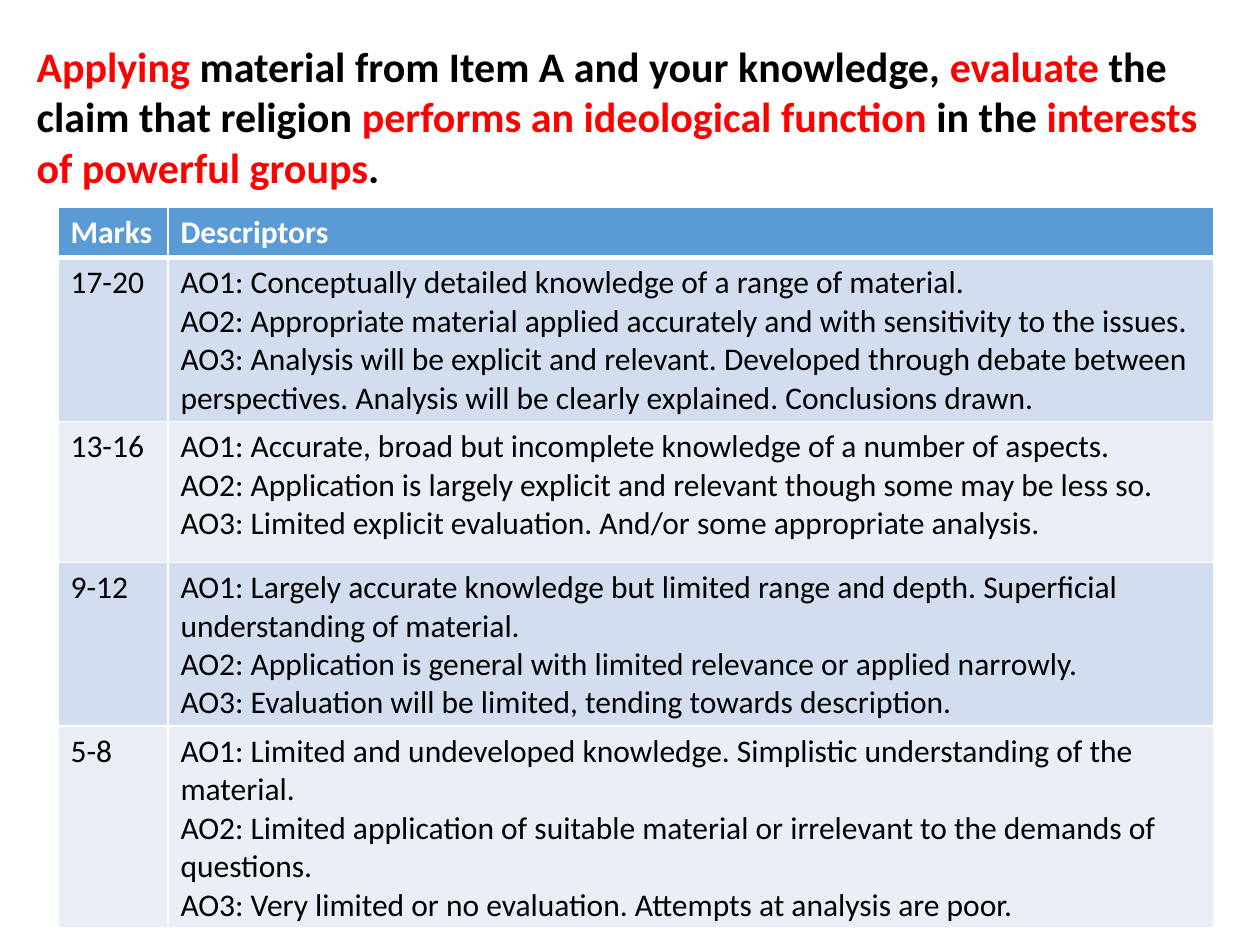
from dataclasses import dataclass

from lxml.etree import SubElement
from pptx import Presentation
from pptx.dml.color import RGBColor
from pptx.enum.text import MSO_ANCHOR, MSO_AUTO_SIZE, PP_ALIGN
from pptx.oxml.ns import qn
from pptx.slide import Slide
from pptx.table import _Cell
from pptx.util import Emu, Pt

EMU_PER_PX = 914400 / 126
FONT = "Calibri"
BLACK = RGBColor(0x00, 0x00, 0x00)
WHITE = RGBColor(0xFF, 0xFF, 0xFF)
RED = RGBColor(0xFF, 0x00, 0x00)
HEADER_BLUE = RGBColor(0x5B, 0x9B, 0xD5)
BANDS = (RGBColor(0xD2, 0xDE, 0xEF), RGBColor(0xEA, 0xEF, 0xF7))

QUESTION = (
    ("Applying ", RED),
    ("material from Item A and your knowledge, ", BLACK),
    ("evaluate", RED),
    (" the claim that religion ", BLACK),
    ("performs an ideological function ", RED),
    ("in the ", BLACK),
    ("interests of powerful groups", RED),
    (".", BLACK),
)


@dataclass(frozen=True)
class MarkBand:
    marks: str
    descriptors: tuple[str, ...]


MARK_BANDS = (
    MarkBand("17-20", (
        "AO1: Conceptually detailed knowledge of a range of material.",
        "AO2: Appropriate material applied accurately and with sensitivity to the issues.",
        "AO3: Analysis will be explicit and relevant. Developed through debate between "
        "perspectives. Analysis will be clearly explained. Conclusions drawn.",
    )),
    MarkBand("13-16", (
        "AO1: Accurate, broad but incomplete knowledge of a number of aspects.",
        "AO2: Application is largely explicit and relevant though some may be less so.",
        "AO3: Limited explicit evaluation. And/or some appropriate analysis.",
    )),
    MarkBand("9-12", (
        "AO1: Largely accurate knowledge but limited range and depth. "
        "Superficial understanding of material.",
        "AO2: Application is general with limited relevance or applied narrowly.",
        "AO3: Evaluation will be limited, tending towards description.",
    )),
    MarkBand("5-8", (
        "AO1: Limited and undeveloped knowledge. Simplistic understanding of the material.",
        "AO2: Limited application of suitable material or irrelevant to the demands of questions.",
        "AO3: Very limited or no evaluation. Attempts at analysis are poor.",
    )),
)


def px(length: int) -> Emu:
    """Convert whole pixels to EMU."""
    return Emu(round(length * EMU_PER_PX))


def draw_question(slide: Slide) -> None:
    """Fill the title placeholder with the two-coloured exam question."""
    question = slide.shapes.title
    question.left, question.top = px(24), px(34)
    question.width, question.height = px(1216), px(165)
    frame = question.text_frame
    frame.word_wrap = True
    frame.auto_size = MSO_AUTO_SIZE.SHAPE_TO_FIT_TEXT
    frame.vertical_anchor = MSO_ANCHOR.TOP
    paragraph = frame.paragraphs[0]
    paragraph.alignment = PP_ALIGN.LEFT
    paragraph.font.name = FONT
    paragraph.font.size = Pt(24)
    paragraph.font.bold = True
    for words, color in QUESTION:
        run = paragraph.add_run()
        run.text = words
        run.font.color.rgb = color


def add_borders(cell: _Cell, top: int, bottom: int) -> None:
    """Give a cell white borders, with its top and bottom widths in points."""
    properties = cell._tc.get_or_add_tcPr()
    for side, points in (("L", 1), ("R", 1), ("T", top), ("B", bottom)):
        line = SubElement(properties, qn(f"a:ln{side}"), w=str(Pt(points)))
        fill = SubElement(line, qn("a:solidFill"))
        SubElement(fill, qn("a:srgbClr"), val=str(WHITE))


def fill_cell(cell: _Cell, lines: tuple[str, ...], row: int) -> None:
    """Write a cell's lines in the style of its row."""
    is_header = row == 0
    add_borders(cell, top=3 if row == 1 else 1, bottom=3 if is_header else 1)
    cell.fill.solid()
    cell.fill.fore_color.rgb = HEADER_BLUE if is_header else BANDS[(row - 1) % 2]
    cell.text = "\n".join(lines)
    for paragraph in cell.text_frame.paragraphs:
        paragraph.font.name = FONT
        paragraph.font.size = Pt(18)
        paragraph.font.bold = is_header
        paragraph.font.color.rgb = WHITE if is_header else BLACK


def draw_mark_scheme(slide: Slide) -> None:
    """Draw the table of mark bands and their descriptors."""
    bands = (MarkBand("Marks", ("Descriptors",)), *MARK_BANDS)
    mark_scheme = slide.shapes.add_table(
        len(bands), 2, px(58), px(207), px(1156), px(720))
    table = mark_scheme.table
    for column, width in zip(table.columns, (110, 1046)):
        column.width = px(width)
    for row, band in enumerate(bands):
        table.rows[row].height = px(141 if row else 34)
        fill_cell(table.cell(row, 0), (band.marks,), row)
        fill_cell(table.cell(row, 1), band.descriptors, row)
    mark_scheme.height = px(720)


def main() -> None:
    """Build and save the slide."""
    presentation = Presentation()
    presentation.slide_width, presentation.slide_height = px(1260), px(945)
    slide = presentation.slides.add_slide(presentation.slide_layouts[5])
    draw_question(slide)
    draw_mark_scheme(slide)
    presentation.save("out.pptx")


if __name__ == "__main__":
    main()
